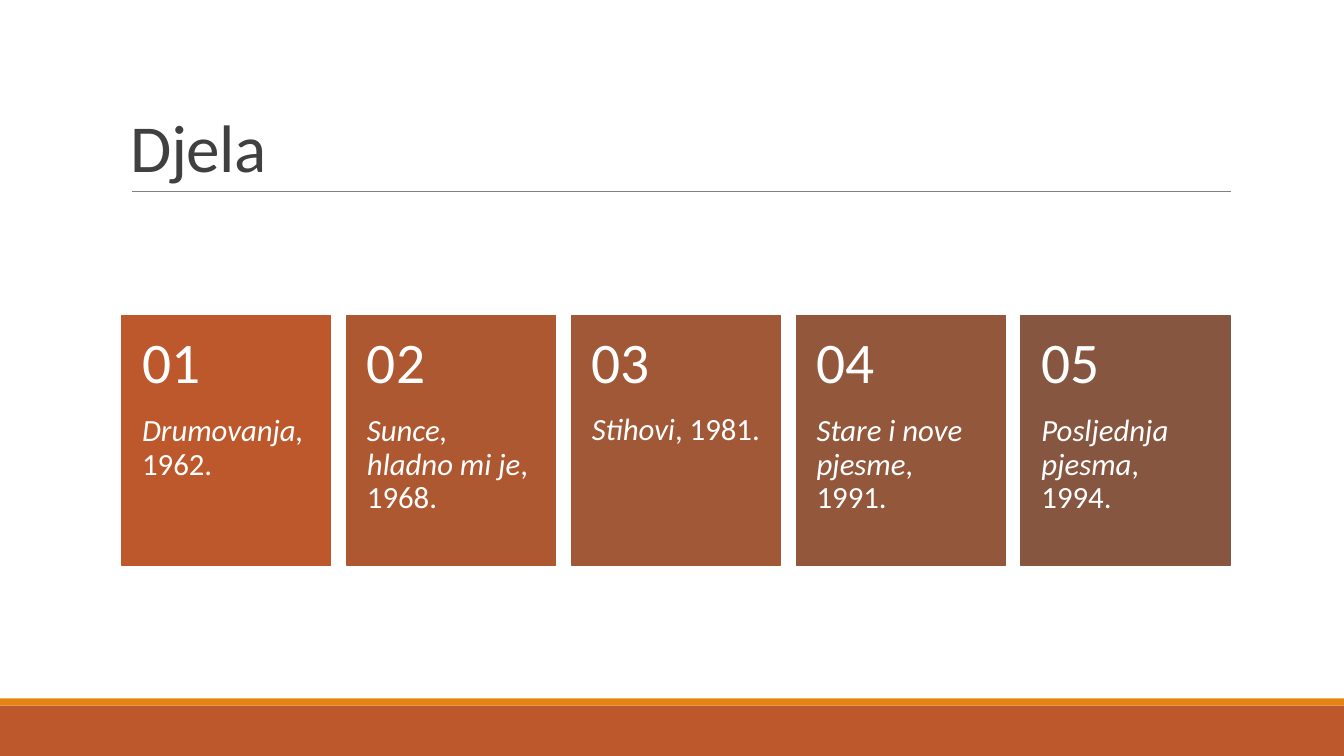
from pptx import Presentation
from pptx.dml.color import RGBColor
from pptx.enum.shapes import MSO_CONNECTOR, MSO_SHAPE
from pptx.enum.text import MSO_ANCHOR
from pptx.oxml.ns import qn
from pptx.util import Inches, Pt
from lxml.etree import SubElement

TITLE = "Djela"
WORKS = [
    ("Drumovanja, ", "1962.", "BD582C"),
    ("Sunce, hladno mi je", ", 1968.", "AE5832"),
    ("Stihovi", ", 1981.", "A05837"),
    ("Stare i nove pjesme", ", 1991.", "93573C"),
    ("Posljednja pjesma", ", 1994.", "865640"),
]
BANDS = [(7, 0.5, "BD582C"), (6.93, 0.07, "E48312")]
PAGE_WIDTH, PAGE_HEIGHT = 13.33, 7.5
CARD_LEFT, CARD_TOP, CARD_STEP = 1.21, 3.13, 2.23
CARD_WIDTH, CARD_HEIGHT, NUMBER_HEIGHT = 2.07, 2.48, 0.99


def color(value):
    return RGBColor.from_string(value)


def add_block(page, left, top, width, height, fill, outlined=False):
    block = page.shapes.add_shape(
        MSO_SHAPE.RECTANGLE, Inches(left), Inches(top), Inches(width), Inches(height))
    block.shadow.inherit = False
    block.fill.solid()
    block.fill.fore_color.rgb = color(fill)
    if outlined:
        block.line.color.rgb = color(fill)
        block.line.width = Pt(1.25)
    else:
        block.line.fill.background()


def add_text(page, place, insets, anchor, spans, size, text_color, spacing, after=0):
    box = page.shapes.add_textbox(*(Inches(length) for length in place))
    frame = box.text_frame
    frame.word_wrap = True
    frame.vertical_anchor = anchor
    frame.margin_left, frame.margin_top, frame.margin_right, frame.margin_bottom = (
        Inches(inset) for inset in insets)
    para = frame.paragraphs[0]
    para.line_spacing = spacing
    para.space_after = Pt(after)
    para.font.name = "Calibri"
    para.font.size = Pt(size)
    para.font.color.rgb = color(text_color)
    for words, italic in spans:
        span = para.add_run()
        span.text = words
        if italic:
            span.font.italic = True
    return para


def add_rule(page):
    rule = page.shapes.add_connector(
        MSO_CONNECTOR.STRAIGHT, Inches(1.31), Inches(1.9), Inches(12.21), Inches(1.9))
    rule.line.color.rgb = color("808080")
    rule.line.width = Pt(0.5)
    SubElement(rule._element.spPr, qn("a:effectLst"))


def add_card(page, index, name, year, fill):
    left = CARD_LEFT + index * CARD_STEP
    body_top = CARD_TOP + NUMBER_HEIGHT
    body_height = CARD_HEIGHT - NUMBER_HEIGHT
    add_block(page, left, CARD_TOP, CARD_WIDTH, CARD_HEIGHT, fill, outlined=True)
    add_text(page, (left, body_top, CARD_WIDTH, body_height), (0.2, 0, 0.2, 0.36),
             MSO_ANCHOR.TOP, [(name, True), (year, False)], 22, "FFFFFF", 0.9, 7.7)
    add_text(page, (left, CARD_TOP, CARD_WIDTH, NUMBER_HEIGHT), (0.2, 0.18, 0.2, 0.18),
             MSO_ANCHOR.MIDDLE, [(f"{index + 1:02d}", False)], 41, "FFFFFF", 0.9)


def main():
    deck = Presentation()
    deck.slide_width, deck.slide_height = Inches(PAGE_WIDTH), Inches(PAGE_HEIGHT)
    page = deck.slides.add_slide(deck.slide_layouts[6])
    for top, height, fill in BANDS:
        add_block(page, 0, top, PAGE_WIDTH, height, fill)
    add_rule(page)
    title = add_text(page, (1.2, 0.31, 11, 1.59), (0.1, 0.05, 0.1, 0.05),
                     MSO_ANCHOR.BOTTOM, [(TITLE, False)], 48, "404040", 0.85)
    title.runs[0]._r.get_or_add_rPr().set("spc", "-50")
    for index, work in enumerate(WORKS):
        add_card(page, index, *work)
    deck.save("out.pptx")


if __name__ == "__main__":
    main()
